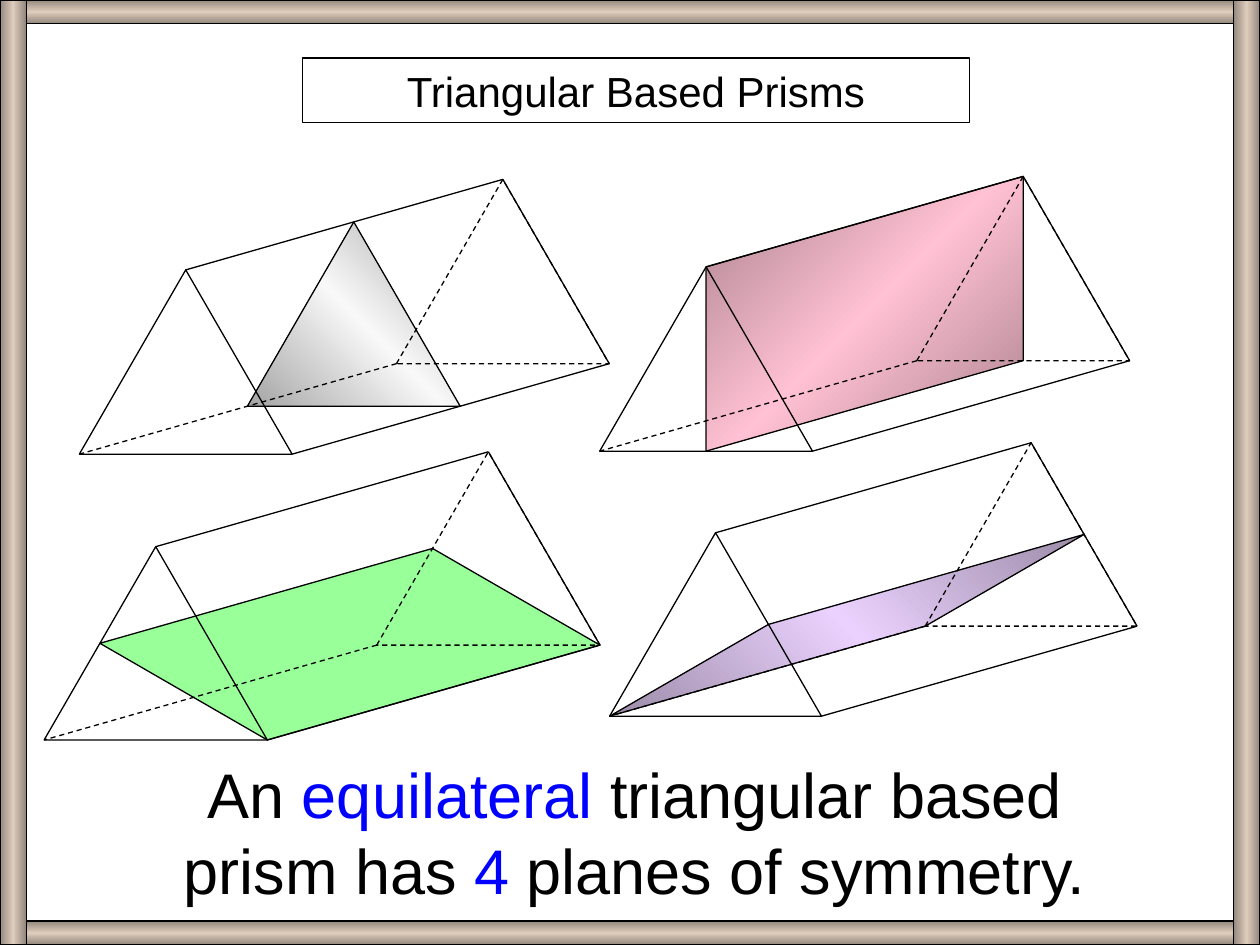
from copy import deepcopy
from lxml.etree import SubElement as sub
from pptx import Presentation
from pptx.dml.color import RGBColor
from pptx.enum.dml import MSO_LINE as Dash
from pptx.enum.shapes import MSO_CONNECTOR as Conn, MSO_SHAPE as Kind
from pptx.enum.text import MSO_ANCHOR as Anchor, PP_ALIGN as Align
from pptx.oxml.ns import qn
from pptx.util import Cm, Pt

rgb = RGBColor.from_string
BLACK, BLUE = "000000", "0000FF"


def paint(shape, tones=(), angle=0, dash=False):
    """Black outline, no shadow; one tone is solid, two run edge-middle-edge."""
    props = shape._element.spPr
    if len(tones) == 2:
        shape.fill.gradient()
        shape.fill.gradient_angle = angle
        for stop, tone in zip(shape.fill.gradient_stops, tones):
            stop.color.rgb = rgb(tone)
        stops = props.find(qn("a:gradFill")).find(qn("a:gsLst"))
        stops[1].set("pos", "50000")
        last = deepcopy(stops[0])
        last.set("pos", "100000")
        stops.append(last)
    elif tones:
        shape.fill.solid()
        shape.fill.fore_color.rgb = rgb(tones[0])
    elif hasattr(shape, "fill"):
        shape.fill.background()
    shape.line.color.rgb = rgb(BLACK)
    shape.line.width = Pt(0.75)
    if dash:
        shape.line.dash_style = Dash.DASH
    sub(props, qn("a:effectLst"))


def spot(prism, point):
    """Place a point given as (along base, up, depth), each from 0 to 1."""
    left, top, side = prism
    across, up, deep = point
    return (Cm(left + side * (across + 1.49 * deep)),
            Cm(top + side * (0.866 * (1 - up) - 0.425 * deep)))


prs = Presentation()
prs.slide_width, prs.slide_height = Cm(25.4), Cm(19.05)
slide = prs.slides.add_slide(prs.slide_layouts[5])
shapes = slide.shapes

# Title and sentence
title = shapes.title
title.left, title.top, title.width, title.height = Cm(6.1), Cm(1.17), Cm(13.44), Cm(1.3)
paint(title)
note = shapes.add_textbox(Cm(2.9), Cm(15.11), Cm(19.79), Cm(3.3))
texts = [
    (title, 24, [("Triangular Based Prisms", BLACK)]),
    (note, 36, [("An ", BLACK), ("equilateral ", BLUE),
                ("triangular based prism has ", BLACK), ("4 ", BLUE),
                ("planes of symmetry.", BLACK)]),
]
for box, size, runs in texts:
    frame = box.text_frame
    frame.word_wrap = True
    frame.vertical_anchor = Anchor.MIDDLE
    para = frame.paragraphs[0]
    para.alignment = Align.CENTER
    for words, tone in runs:
        run = para.add_run()
        run.text = words
        style = {"name": "Arial", "size": Pt(size), "bold": False}
        for key, value in style.items():
            setattr(run.font, key, value)
        run.font.color.rgb = rgb(tone)

# Frame bars
bars = [(0, 0, 25.4, 0.48, 90), (0, 18.57, 25.4, 0.48, 90),
        (0, 0, 0.53, 19.05, 0), (24.87, 0, 0.53, 19.05, 0)]
for *area, angle in bars:
    bar = shapes.add_shape(Kind.RECTANGLE, *map(Cm, area))
    paint(bar, ("93877D", "DECCBC"), angle)

# Corners: front left, right, apex, then the same at the back
A, B, C = (0, 0, 0), (1, 0, 0), (0.5, 1, 0)
D, E, F = (0, 0, 1), (1, 0, 1), (0.5, 1, 1)
edges = [(B, E, False), (C, F, False), (D, A, True), (F, E, False)]

# Each prism: left, top and side in cm, then its plane of symmetry
CUT = 0.53
prisms = [
    ((1.6, 5.44, 4.29), [(0, 0, CUT), (0.5, 1, CUT), (1, 0, CUT)],
     ("A4A4A4", "F8F8F8"), 45),
    ((12.09, 5.38, 4.29), [C, (0.5, 0, 0), (0.5, 0, 1), F],
     ("A9808C", "FFC1D3"), 315),
    ((0.89, 11.02, 4.5), [(0.25, 0.5, 0), (0.25, 0.5, 1), E, B],
     ("99FF99",), 0),
    ((12.29, 10.74, 4.27), [(0.75, 0.5, 0), (0.75, 0.5, 1), D, A],
     ("9C8BA8", "EBD2FE"), 45),
]
for prism, plane, tones, angle in prisms:
    # Plane of symmetry
    first, *rest = [spot(prism, point) for point in plane]
    form = shapes.build_freeform(*first)
    form.add_line_segments(rest, close=True)
    paint(form.convert_to_shape(), tones, angle)

    # Front and back faces
    side = prism[2]
    for deep in (0, 1):
        x, y = spot(prism, (0, 1, deep))
        face = shapes.add_shape(Kind.ISOSCELES_TRIANGLE, x, y,
                                Cm(side), Cm(0.866 * side))
        paint(face, dash=deep == 1)

    # Remaining edges
    for start, end, dash in edges:
        edge = shapes.add_connector(Conn.STRAIGHT, *spot(prism, start),
                                    *spot(prism, end))
        paint(edge, dash=dash)

prs.save("out.pptx")
